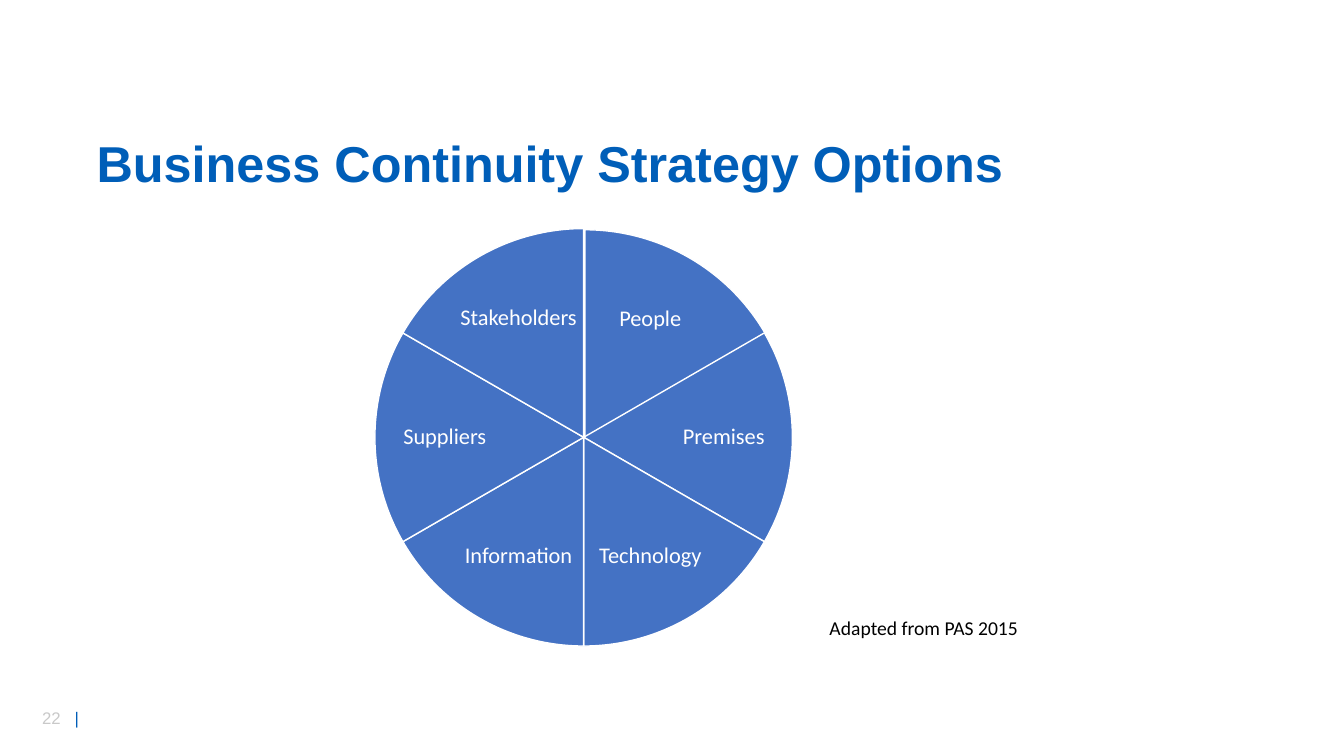
from pptx import Presentation
from pptx.dml.color import RGBColor
from pptx.enum import shapes, text
from pptx.oxml import parse_xml
from pptx.oxml.ns import nsdecls
from pptx.util import Cm, Pt

# Content
TITLE = "Business Continuity Strategy Options"
SOURCE = "Adapted from PAS 2015"
PAGE = "22"
# Clockwise from the top: name, label centre relative to the wheel centre (cm)
OPTIONS = [
    ("People", 1.68, -2.97),
    ("Premises", 3.53, 0),
    ("Technology", 1.68, 2.99),
    ("Information", -1.64, 2.99),
    ("Suppliers", -3.5, 0),
    ("Stakeholders", -1.64, -2.99),
]

BLUE = RGBColor(0x00, 0x5E, 0xB8)
SLICE = RGBColor(0x44, 0x72, 0xC4)
GREY = RGBColor(0xC9, 0xC9, 0xC9)
WHITE = RGBColor(0xFF, 0xFF, 0xFF)
BLACK = RGBColor(0x00, 0x00, 0x00)

# Wheel geometry (cm)
CENTRE_X, CENTRE_Y, DIAMETER = 14.71, 11.02, 10.52
LABEL_W, LABEL_H = 3.12, 2.2
FIRST_SHIFT = 0.03
ADJ_PER_DEGREE = 0.6

prs = Presentation()
prs.slide_width, prs.slide_height = Cm(33.87), Cm(19.05)
s = prs.slides.add_slide(prs.slide_layouts[5])


def add_run(p, words, size, font, colour, bold=False):
    r = p.add_run()
    r.text = words
    r.font.size, r.font.name, r.font.bold = Pt(size), font, bold
    r.font.color.rgb = colour


def add_box(x, y, w, h):
    tf = s.shapes.add_textbox(Cm(x), Cm(y), Cm(w), Cm(h)).text_frame
    tf.word_wrap = True
    return tf


# Title
title = s.shapes.title
title.left, title.top, title.width, title.height = Cm(2.18), Cm(3.35), Cm(29.57), Cm(1.7)
tf = title.text_frame
tf.auto_size = text.MSO_AUTO_SIZE.NONE
tf.vertical_anchor = text.MSO_ANCHOR.MIDDLE
p = tf.paragraphs[0]
p.alignment, p.line_spacing = text.PP_ALIGN.LEFT, 0.9
add_run(p, TITLE, 36, "Arial", BLUE, True)

# Wheel: one equal slice and one label per option
step = 360 / len(OPTIONS)
for i, (name, dx, dy) in enumerate(OPTIONS):
    shift = FIRST_SHIFT if i == 0 else 0
    sp = s.shapes.add_shape(
        shapes.MSO_SHAPE.PIE,
        Cm(CENTRE_X - DIAMETER / 2 + shift), Cm(CENTRE_Y - DIAMETER / 2 + shift),
        Cm(DIAMETER), Cm(DIAMETER))
    start = 270 + i * step
    sp.adjustments[0] = start % 360 * ADJ_PER_DEGREE
    sp.adjustments[1] = (start + step) % 360 * ADJ_PER_DEGREE
    sp.shadow.inherit = False
    sp.fill.solid()
    sp.fill.fore_color.rgb = SLICE
    sp.line.color.rgb = WHITE
    sp.line.width = Pt(1)

    tf = add_box(CENTRE_X + dx - LABEL_W / 2, CENTRE_Y + dy - LABEL_H / 2, LABEL_W, LABEL_H)
    tf.margin_left = tf.margin_right = tf.margin_top = tf.margin_bottom = Cm(0.05)
    tf.vertical_anchor = text.MSO_ANCHOR.MIDDLE
    p = tf.paragraphs[0]
    p.alignment, p.line_spacing = text.PP_ALIGN.CENTER, 0.9
    add_run(p, name, 16, "Calibri", WHITE)

# Source line
p = add_box(19.81, 15.39, 6.1, 0.86).paragraphs[0]
p.alignment = text.PP_ALIGN.RIGHT
add_run(p, SOURCE, 14, "Calibri", BLACK)

# Page number and bar, set apart by a tab stop
p = add_box(0.81, 17.7, 1.8, 0.76).paragraphs[0]
p._p.get_or_add_pPr().append(parse_xml(
    f'<a:tabLst {nsdecls("a")}><a:tab pos="{Cm(0.82)}" algn="l"/></a:tabLst>'))
add_run(p, PAGE + "\t", 12, "Arial", GREY)
add_run(p, "|", 12, "Arial", BLUE)

prs.save("out.pptx")
